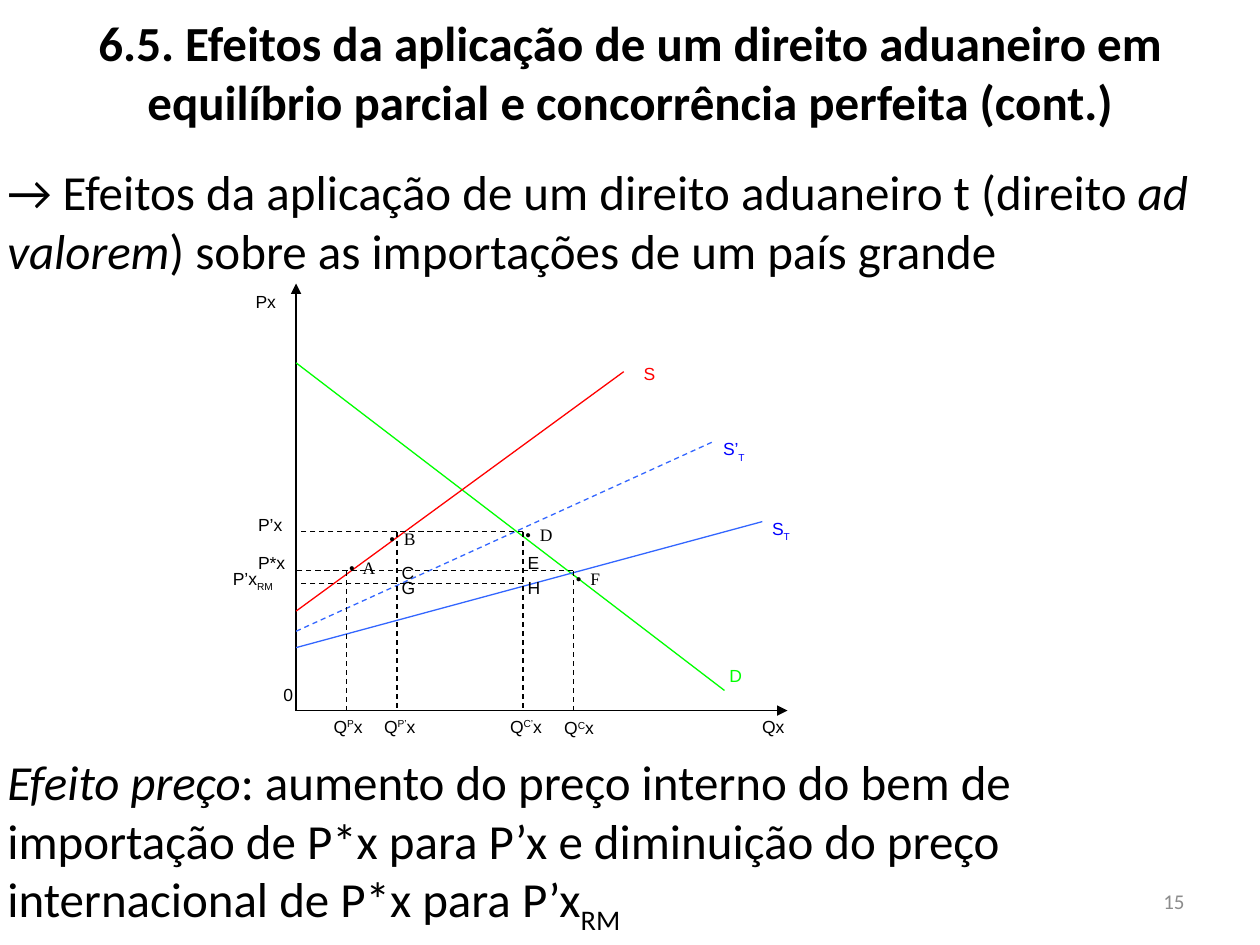
"""Build the slide on the effects of an ad valorem tariff in a large country."""
from lxml.etree import SubElement
from pptx import Presentation
from pptx.dml.color import RGBColor
from pptx.enum.dml import MSO_LINE_DASH_STYLE as Dash
from pptx.enum.shapes import MSO_CONNECTOR_TYPE as Connector
from pptx.enum.text import MSO_ANCHOR as Anchor, PP_ALIGN as Align
from pptx.oxml.ns import qn
from pptx.util import Inches, Pt

BLACK, RED, GREEN = "000000", "FF0000", "00FF00"
BLUE, DEEP_BLUE, GREY = "3366FF", "0000FF", "8C8C8C"

deck = Presentation()
deck.slide_width, deck.slide_height = Inches(10), Inches(7.5)
COL, ROW = deck.slide_width / 100, deck.slide_height / 75
slide = deck.slides.add_slide(deck.slide_layouts[6])


def color(value):
    return RGBColor.from_string(value)


def write(parts, col, row, cols=7, rows=4, size=10, face="Arial", ink=BLACK,
          bold=False, align=Align.LEFT, anchor=Anchor.TOP, spacing=0):
    """Write (text, style) parts; a style is "italic", a baseline shift or None."""
    box = slide.shapes.add_textbox(
        int(col * COL), int(row * ROW), int(cols * COL), int(rows * ROW))
    frame = box.text_frame
    frame.word_wrap = True
    frame.vertical_anchor = anchor
    paragraph = frame.paragraphs[0]
    paragraph.alignment = align
    for text, style in parts:
        run = paragraph.add_run()
        run.text = text
        font = run.font
        font.size, font.name, font.bold = Pt(size), face, bold
        font.italic = style == "italic"
        font.color.rgb = color(ink)
        properties = run._r.get_or_add_rPr()
        if isinstance(style, int):
            properties.set("baseline", str(style * 1000))
        if spacing:
            properties.set("spc", str(spacing))


body = dict(cols=100, size=28, face="Calibri")
write([("6.5. Efeitos da aplicação de um direito aduaneiro em equilíbrio "
        "parcial e concorrência perfeita (cont.)", None)],
      0, 0.5, rows=10.4, bold=True, align=Align.CENTER, **body)
write([("→ Efeitos da aplicação de um direito aduaneiro t (direito ", None),
       ("ad valorem", "italic"),
       (") sobre as importações de um país grande", None)],
      -0.4, 12.3, rows=10.4, anchor=Anchor.MIDDLE, **body)
write([("15", None)], 71.7, 69.5, cols=23.3, size=12, face="Calibri",
      ink=GREY, align=Align.RIGHT, anchor=Anchor.MIDDLE)
write([("Efeito preço", "italic"),
       (": aumento do preço interno do bem de importação de P*x para P’x e "
        "diminuição do preço internacional de P*x para P’x", None),
       ("RM", -25)],
      -0.4, 59.4, rows=15.1, anchor=Anchor.MIDDLE, **body)

AXIS, BASE = 23.5, 56.4
FREE_PRICE, TARIFF_PRICE, WORLD_PRICE = 45.3, 42.2, 46.3
SUPPLY_FREE, SUPPLY_TARIFF, DEMAND_TARIFF, DEMAND_FREE = 27.5, 31.5, 41.5, 45.5

axes = [(AXIS, BASE, AXIS, 22.5), (AXIS, BASE, 62.5, BASE)]
curves = [
    (AXIS, 28.8, 57.5, 54.8, GREEN, False),
    (AXIS, 48.5, 49.5, 29.5, RED, False),
    (AXIS, 51.4, 60.5, 41.4, BLUE, False),
    (AXIS, 50.1, 56.5, 35.1, BLUE, True),
]
price_guides = [(DEMAND_TARIFF, TARIFF_PRICE), (DEMAND_FREE, FREE_PRICE),
                (DEMAND_TARIFF, WORLD_PRICE)]
quantity_guides = [(SUPPLY_FREE, FREE_PRICE), (SUPPLY_TARIFF, TARIFF_PRICE),
                   (DEMAND_TARIFF, TARIFF_PRICE), (DEMAND_FREE, FREE_PRICE)]

strokes = [(*ends, BLACK, False, True) for ends in axes]
strokes += [(*curve, False) for curve in curves]
strokes += [(q, p, AXIS, p, BLACK, True, False) for q, p in price_guides]
strokes += [(q, p, q, BASE, BLACK, True, False) for q, p in quantity_guides]

for x1, y1, x2, y2, ink, dashed, arrow in strokes:
    stroke = slide.shapes.add_connector(
        Connector.STRAIGHT, int(x1 * COL), int(y1 * ROW), int(x2 * COL), int(y2 * ROW))
    stroke.line.color.rgb = color(ink)
    stroke.line.width = Pt(0.75)
    if dashed:
        stroke.line.dash_style = Dash.DASH
    if arrow:
        SubElement(stroke.line._get_or_add_ln(), qn("a:tailEnd"), type="triangle")
    SubElement(stroke._element.spPr, qn("a:effectLst"))

for letter, col, row in [("F", 44.7, 44.6), ("D", 40.7, 41.1),
                         ("B", 29.9, 41.4), ("A", 26.7, 43.7)]:
    write([(f"• {letter}", None)], col, row, face="Times New Roman", spacing=125)

for text, col, row, ink in [
    ("C", 30.9, 44.1, BLACK), ("G", 30.9, 45.3, BLACK),
    ("E", 40.9, 43.3, BLACK), ("H", 40.9, 45.3, BLACK),
    ("P’x", 19.5, 40.3, BLACK), ("P*x", 19.5, 43.3, BLACK),
    ("Qx", 59.5, 56.3, BLACK), ("Px", 19.3, 22.6, BLACK),
    ("0", 21.5, 53.8, BLACK), ("S", 50.1, 28.3, RED), ("D", 56.9, 52.3, GREEN),
]:
    write([(text, None)], col, row, ink=ink)

for text, index, col, row, ink in [
    ("P’x", "RM", 17.5, 44.6, BLACK),
    ("S", "T", 60.3, 40.6, DEEP_BLUE), ("S’", "T", 56.4, 34.3, DEEP_BLUE),
]:
    write([(text, None), (index, -30)], col, row, cols=10, ink=ink)

for index, quantity, row in [("P", SUPPLY_FREE, 56.3), ("P’", SUPPLY_TARIFF, 56.3),
                             ("C’", DEMAND_TARIFF, 56.3), ("C", DEMAND_FREE - 0.3 + 0.6, 56.4)]:
    write([("Q", None), (index, 30), ("x", None)], quantity - 2, row)

deck.save("out.pptx")
